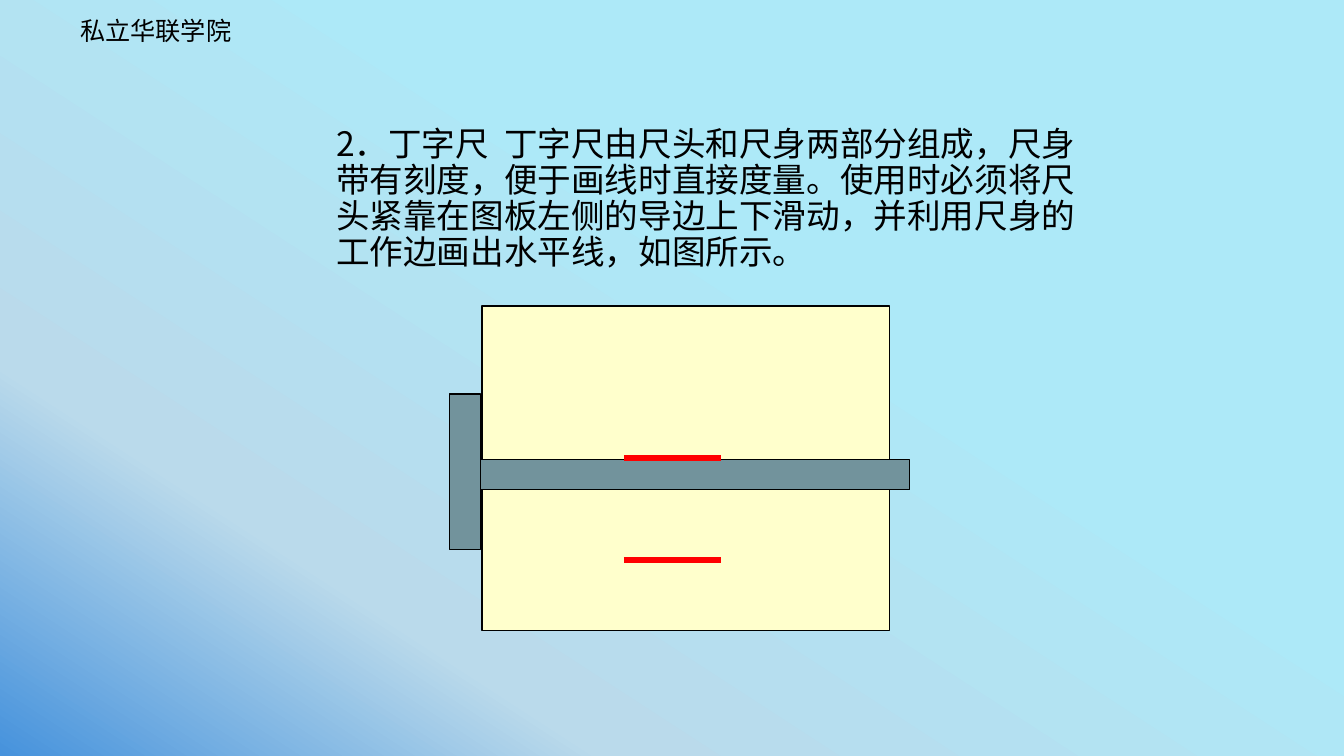
import copy
from dataclasses import dataclass

import pptx
import pptx.dml.color
import pptx.enum.dml
import pptx.enum.shapes
import pptx.enum.text
import pptx.oxml
import pptx.oxml.ns
import pptx.shapes.autoshape
import pptx.slide
import pptx.text.text
import pptx.util

RGBColor = pptx.dml.color.RGBColor
BLACK = RGBColor(0x00, 0x00, 0x00)
RED = RGBColor(0xFF, 0x00, 0x00)
PAPER = RGBColor(0xFF, 0xFF, 0xCC)
RULER = RGBColor(0x72, 0x93, 0x9C)
BLUE = RGBColor(0x46, 0x92, 0xDC)
MIST = RGBColor(0xBA, 0xDA, 0xEB)
SKY = RGBColor(0xAD, 0xE9, 0xF8)

EMU_PER_PX = 914400 / 100.8
SCHOOL_FONT = "Noto Sans CJK JP"
TITLE_FONT = "Noto Sans CJK SC"
SCHOOL = "私立华联学院"
TITLE = (
    "2．丁字尺  丁字尺由尺头和尺身两部分组成，尺身带有刻度，便于画线时直接度量。"
    "使用时必须将尺头紧靠在图板左侧的导边上下滑动，并利用尺身的工作边画出水平线，如图所示。"
)


@dataclass(frozen=True)
class Area:
    left: int
    top: int
    width: int
    height: int

    def emu(self) -> tuple[int, ...]:
        return tuple(px(side) for side in (self.left, self.top, self.width, self.height))


@dataclass(frozen=True)
class Plate:
    area: Area
    fill: RGBColor


@dataclass(frozen=True)
class Stop:
    position: float
    color: RGBColor


BOARD = Plate(Area(482, 306, 408, 325), PAPER)
T_SQUARE = (
    Plate(Area(450, 394, 31, 156), RULER),
    Plate(Area(481, 460, 429, 30), RULER),
)
STROKE_LEFT, STROKE_RIGHT = 624, 721
STROKE_TOPS = (458, 560)
STOPS = (Stop(0, BLUE), Stop(0.24, MIST), Stop(0.62, SKY))


def px(length: int) -> int:
    return round(length * EMU_PER_PX)


def paint_background(page: pptx.slide.Slide) -> None:
    fill = page.background.fill
    fill.gradient()
    fill.gradient_angle = 57
    stop_list = page.element.find(".//" + pptx.oxml.ns.qn("a:gsLst"))
    stop_list.append(copy.deepcopy(stop_list[0]))
    for gradient_stop, stop in zip(fill.gradient_stops, STOPS):
        gradient_stop.position = stop.position
        gradient_stop.color.rgb = stop.color


def write_text(
    frame: pptx.text.text.TextFrame, text: str, size: int, font_name: str
) -> None:
    frame.text = text
    frame.word_wrap = True
    frame.margin_left = frame.margin_right = pptx.util.Inches(0.05)
    frame.margin_top = frame.margin_bottom = pptx.util.Inches(0.05)
    para = frame.paragraphs[0]
    para.alignment = pptx.enum.text.PP_ALIGN.LEFT
    font = para.runs[0].font
    font.size = pptx.util.Pt(size)
    font.name = font_name
    font.color.rgb = BLACK
    east_asian = pptx.oxml.parse_xml(
        f'<a:ea {pptx.oxml.ns.nsdecls("a")} typeface="{font_name}"/>'
    )
    para.runs[0].font._element.find(pptx.oxml.ns.qn("a:latin")).addnext(east_asian)


def add_school(page: pptx.slide.Slide) -> None:
    box = page.shapes.add_textbox(*Area(75, 10, 296, 40).emu())
    write_text(box.text_frame, SCHOOL, 18, SCHOOL_FONT)
    box.text_frame.auto_size = pptx.enum.text.MSO_AUTO_SIZE.SHAPE_TO_FIT_TEXT


def fill_title(page: pptx.slide.Slide) -> None:
    title = page.shapes.title
    title.left, title.top, title.width, title.height = Area(331, 92, 779, 215).emu()
    frame = title.text_frame
    write_text(frame, TITLE, 24, TITLE_FONT)
    frame.auto_size = pptx.enum.text.MSO_AUTO_SIZE.NONE
    frame.vertical_anchor = pptx.enum.text.MSO_ANCHOR.MIDDLE
    frame.paragraphs[0].line_spacing = 0.9


def add_plate(shapes, plate: Plate) -> pptx.shapes.autoshape.Shape:
    shape = shapes.add_shape(
        pptx.enum.shapes.MSO_SHAPE.RECTANGLE, *plate.area.emu()
    )
    shape.shadow.inherit = False
    shape.fill.solid()
    shape.fill.fore_color.rgb = plate.fill
    shape.line.color.rgb = BLACK
    shape.line.width = pptx.util.Pt(0.75)
    return shape


def add_stroke(page: pptx.slide.Slide, top: int) -> None:
    stroke = page.shapes.add_connector(
        pptx.enum.shapes.MSO_CONNECTOR.STRAIGHT,
        px(STROKE_LEFT), px(top), px(STROKE_RIGHT), px(top),
    )
    stroke.line.color.rgb = RED
    stroke.line.width = pptx.util.Pt(4.5)
    stroke.element.spPr.append(
        pptx.oxml.parse_xml(f'<a:effectLst {pptx.oxml.ns.nsdecls("a")}/>')
    )


def main() -> None:
    deck = pptx.Presentation()
    deck.slide_width, deck.slide_height = px(1344), px(756)
    page = deck.slides.add_slide(deck.slide_layouts.get_by_name("Title Only"))
    paint_background(page)
    add_school(page)
    fill_title(page)
    add_plate(page.shapes, BOARD)
    t_square = page.shapes.add_group_shape()
    for plate in T_SQUARE:
        add_plate(t_square.shapes, plate)
    for top in STROKE_TOPS:
        add_stroke(page, top)
    deck.save("out.pptx")


if __name__ == "__main__":
    main()
